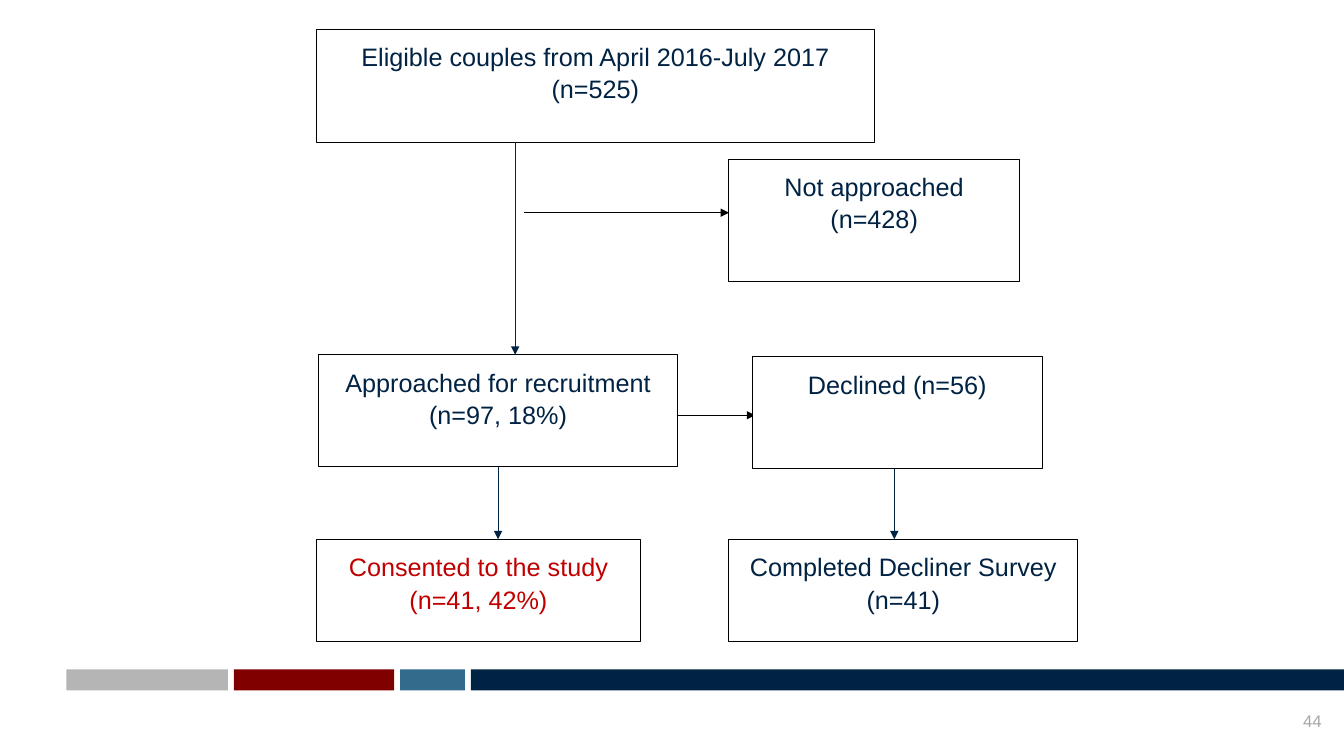
from dataclasses import dataclass

from lxml import etree
from pptx import Presentation
from pptx.dml.color import RGBColor
from pptx.enum import shapes, text
from pptx.oxml import ns
from pptx.util import Inches, Pt

BOTTOM_SIDE = 2


@dataclass(frozen=True)
class Theme:
    font: str = "Arial"
    body_size: int = 18
    number_size: int = 12
    line_width: float = 0.75
    navy: str = "002243"
    blue: str = "326B8B"
    maroon: str = "800000"
    silver: str = "B4B5B4"
    red: str = "C00000"
    black: str = "000000"
    white: str = "FFFFFF"
    grey: str = "A6A6A6"


class FlowSlide:
    def __init__(self, slide, theme):
        self.slide = slide
        self.theme = theme

    def set_wording(self, frame, wording, size, color, align, inset):
        frame.word_wrap = True
        frame.margin_left = frame.margin_right = Inches(inset)
        frame.margin_top = frame.margin_bottom = Inches(inset)
        frame.text = wording
        paragraph = frame.paragraphs[0]
        paragraph.alignment = align
        font = paragraph.runs[0].font
        font.name = self.theme.font
        font.size = Pt(size)
        font.color.rgb = RGBColor.from_string(color)
        return paragraph

    def bar(self, left, top, width, height, color):
        bar = self.slide.shapes.add_shape(
            shapes.MSO_SHAPE.RECTANGLE, *map(Inches, (left, top, width, height)))
        bar.shadow.inherit = False
        bar.fill.solid()
        bar.fill.fore_color.rgb = RGBColor.from_string(color)
        bar.line.fill.background()
        return bar

    def step(self, left, top, width, height, wording, color=None):
        """Add an outlined flowchart box with centred text at its top."""
        step = self.bar(left, top, width, height, self.theme.white)
        step.line.color.rgb = RGBColor.from_string(self.theme.black)
        step.line.width = Pt(self.theme.line_width)
        step.text_frame.vertical_anchor = text.MSO_ANCHOR.TOP
        paragraph = self.set_wording(step.text_frame, wording, self.theme.body_size,
                                     color or self.theme.navy, text.PP_ALIGN.CENTER, 0.1)
        paragraph.line_spacing = 1.07
        return step

    def arrow(self, x1, y1, x2, y2, color):
        arrow = self.slide.shapes.add_connector(
            shapes.MSO_CONNECTOR.STRAIGHT, *map(Inches, (x1, y1, x2, y2)))
        arrow.line.color.rgb = RGBColor.from_string(color)
        arrow.line.width = Pt(self.theme.line_width)
        outline = arrow._element.spPr.find(ns.qn("a:ln"))
        etree.SubElement(outline, ns.qn("a:tailEnd"), type="triangle")
        etree.SubElement(arrow._element.spPr, ns.qn("a:effectLst"))
        return arrow

    def page_number(self, left, top, width, height, number):
        box = self.slide.shapes.add_textbox(*map(Inches, (left, top, width, height)))
        box.text_frame.vertical_anchor = text.MSO_ANCHOR.BOTTOM
        self.set_wording(box.text_frame, number, self.theme.number_size, self.theme.grey,
                         text.PP_ALIGN.RIGHT, 0)


def main():
    deck = Presentation()
    deck.slide_width, deck.slide_height = Inches(13.33), Inches(7.5)
    theme = Theme()
    flow = FlowSlide(deck.slides.add_slide(deck.slide_layouts[6]), theme)

    flow.page_number(12.77, 7.05, 0.34, 0.2, "44")
    for left, width, color in ((0.66, 1.6, theme.silver), (2.32, 1.59, theme.maroon),
                               (3.97, 0.64, theme.blue), (4.67, 8.66, theme.navy)):
        flow.bar(left, 6.64, width, 0.21, color)

    flow.step(7.23, 1.58, 2.88, 1.21, "Not approached (n=428)")
    approached = flow.step(3.16, 3.52, 3.56, 1.11, "Approached for recruitment (n=97, 18%)")
    flow.step(3.14, 0.29, 5.53, 1.12, "Eligible couples from April 2016-July 2017 (n=525)")
    flow.step(3.14, 5.35, 3.21, 1.01, "Consented to the study (n=41, 42%)", theme.red)
    flow.arrow(6.71, 4.12, 7.49, 4.12, theme.black)
    flow.step(7.46, 3.54, 2.88, 1.11, "Declined (n=56)")
    flow.step(7.23, 5.35, 3.46, 1.01, "Completed Decliner Survey (n=41)")

    flow.arrow(5.2, 2.11, 7.23, 2.11, theme.black)
    flow.arrow(5.11, 1.41, 5.11, 3.52, theme.navy)
    to_consent = flow.arrow(4.94, 4.63, 4.94, 5.35, theme.navy)
    to_consent.begin_connect(approached, BOTTOM_SIDE)
    flow.arrow(8.87, 4.65, 8.87, 5.35, theme.navy)

    deck.save("out.pptx")


if __name__ == "__main__":
    main()
